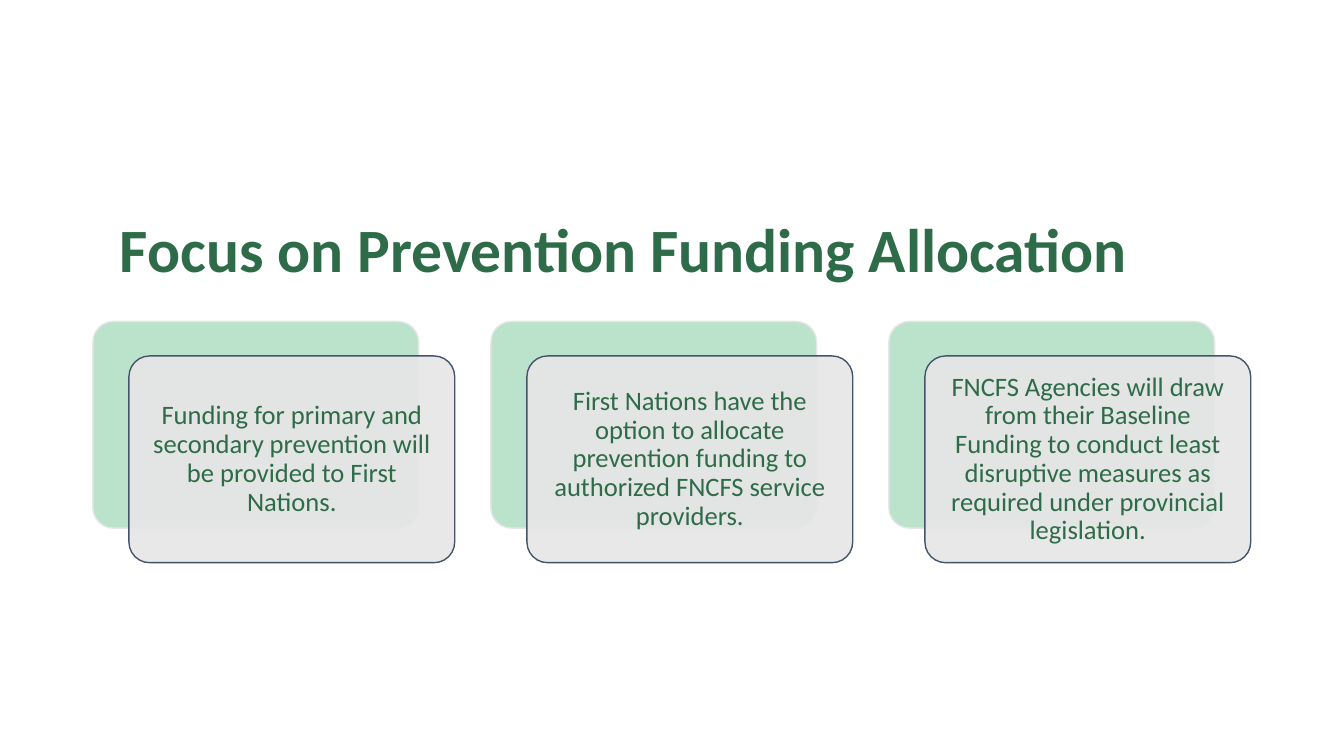
from dataclasses import dataclass

from lxml import etree
from pptx import Presentation
from pptx.dml.color import RGBColor
from pptx.enum.shapes import MSO_SHAPE
from pptx.enum.text import MSO_ANCHOR, PP_ALIGN
from pptx.oxml.ns import qn
from pptx.util import Cm, Pt

ROUNDED = MSO_SHAPE.ROUNDED_RECTANGLE
TOP, MIDDLE = MSO_ANCHOR.TOP, MSO_ANCHOR.MIDDLE
LEFT, CENTER = PP_ALIGN.LEFT, PP_ALIGN.CENTER
BLANK_LAYOUT = 6


@dataclass(frozen=True)
class Theme:
    font: str = "Calibri"
    text: str = "2E6C49"
    back_fill: str = "78C699"
    back_line: str = "E7E6E6"
    card_fill: str = "E7E6E6"
    card_line: str = "44546A"
    title_size: int = 44
    card_size: int = 19


THEME = Theme()
TITLE = "Focus on Prevention Funding Allocation"
CARDS = [
    "Funding for primary and secondary prevention will be provided to First Nations.",
    "First Nations have the option to allocate prevention funding to authorized "
    "FNCFS service providers.",
    "FNCFS Agencies will draw from their Baseline Funding to conduct least "
    "disruptive measures as required under provincial legislation.",
]


def write_text(shape, text, size, align, anchor, bold=False):
    frame = shape.text_frame
    frame.word_wrap = True
    frame.vertical_anchor = anchor
    para = frame.paragraphs[0]
    para.text = text
    para.alignment = align
    para.line_spacing = 0.9
    para.font.name = THEME.font
    para.font.size = Pt(size)
    para.font.bold = bold
    para.font.color.rgb = RGBColor.from_string(THEME.text)
    return frame


def add_panel(page, left, top, width, height, fill, line, opacity):
    """Add a translucent rounded rectangle; opacity is in percent."""
    panel = page.shapes.add_shape(ROUNDED, Cm(left), Cm(top), Cm(width), Cm(height))
    panel.adjustments[0] = 0.1
    panel.shadow.inherit = False
    panel.fill.solid()
    panel.fill.fore_color.rgb = RGBColor.from_string(fill)
    color = panel.fill._xPr.find(f"{qn('a:solidFill')}/{qn('a:srgbClr')}")
    etree.SubElement(color, qn("a:alpha"), val=str(opacity * 1000))
    panel.line.color.rgb = RGBColor.from_string(line)
    panel.line.width = Pt(1)
    return panel


def add_title(page, left, top, width, height):
    box = page.shapes.add_textbox(Cm(left), Cm(top), Cm(width), Cm(height))
    write_text(box, TITLE, THEME.title_size, LEFT, TOP, bold=True)


def add_card(page, left, top, width, height, text):
    """Place a back panel and, shifted down and right, the text card."""
    shift_x, shift_y = 0.91, 0.87
    panel_size = width - shift_x, height - shift_y
    add_panel(page, left, top, *panel_size, THEME.back_fill, THEME.back_line, 50)
    card = add_panel(page, left + shift_x, top + shift_y, *panel_size,
                     THEME.card_fill, THEME.card_line, 90)
    frame = write_text(card, text, THEME.card_size, CENTER, MIDDLE)
    frame.margin_left = frame.margin_right = Cm(0.2)
    frame.margin_top = frame.margin_bottom = Cm(0.2)


def add_card_row(page, left, top, width, height):
    gap = 0.91
    card_width = (width - gap * (len(CARDS) - 1)) / len(CARDS)
    for index, text in enumerate(CARDS):
        add_card(page, left + index * (card_width + gap), top, card_width, height, text)


def main():
    deck = Presentation()
    deck.slide_width, deck.slide_height = Cm(33.87), Cm(19.05)
    page = deck.slides.add_slide(deck.slide_layouts[BLANK_LAYOUT])
    add_title(page, 2.77, 5.41, 29.21, 3.68)
    add_card_row(page, 2.34, 8.1, 29.18, 6.08)
    deck.save("out.pptx")


if __name__ == "__main__":
    main()
